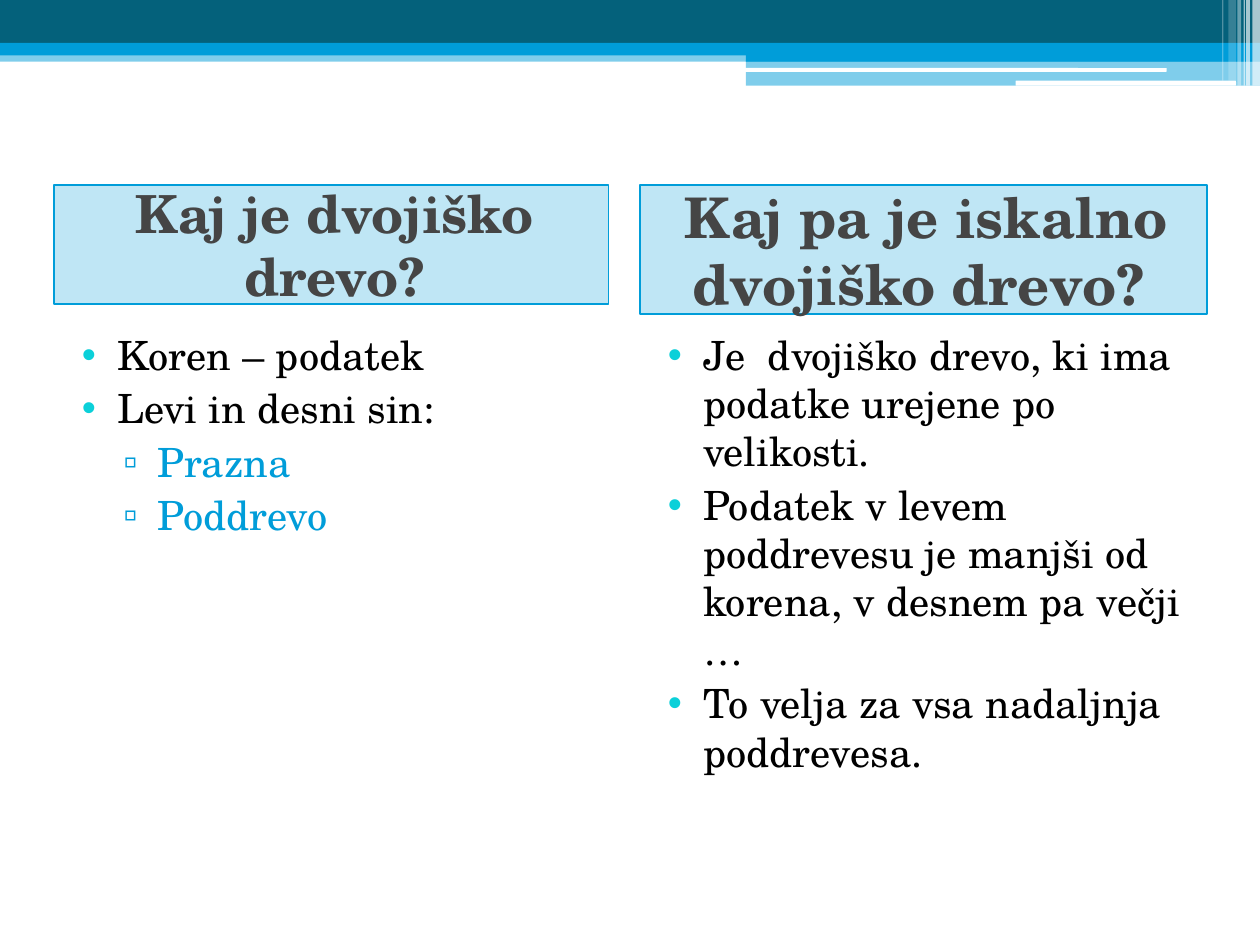
from lxml import etree
from pptx import Presentation
from pptx import util as u
from pptx.dml.color import RGBColor
from pptx.enum import shapes, text
from pptx.oxml.ns import qn

BLUE, TEAL, AQUA = "009DD9", "04617B", "0BD0D9"
WHITE, GREY, BLACK = "FFFFFF", "454545", "000000"


def paint(fill, color, opacity=100):
    fill.solid()
    fill.fore_color.rgb = RGBColor.from_string(color)
    if opacity < 100:
        tone = fill._xPr.find(qn("a:solidFill")).find(qn("a:srgbClr"))
        etree.SubElement(tone, qn("a:alpha"), val=str(opacity * 1000))


def write(para, words, size=23, color=BLACK, bold=False, level=0, margin=0.4,
          indent=-0.28, align=text.PP_ALIGN.LEFT, bullet=None, bullet_color=AQUA):
    para.level = level
    para.alignment = align
    para.space_before = u.Pt(3)
    span = para.add_run()
    span.text = words
    span.font.name = "TeX Gyre Schola"
    span.font.size = u.Pt(size)
    span.font.bold = bold
    paint(span.font.fill, color)
    props = para._p.get_or_add_pPr()
    props.set("marL", str(u.Inches(margin)))
    props.set("indent", str(u.Inches(indent)))
    if bullet:
        tint = etree.SubElement(props, qn("a:buClr"))
        etree.SubElement(tint, qn("a:srgbClr"), val=bullet_color)
        etree.SubElement(props, qn("a:buChar"), char=bullet)
    else:
        etree.SubElement(props, qn("a:buNone"))


deck = Presentation()
deck.slide_width = u.Inches(10)
deck.slide_height = u.Inches(7.5)
page = deck.slides.add_slide(deck.slide_layouts.get_by_name("Comparison"))
paint(page.background.fill, WHITE)
title = page.shapes.title._element
title.getparent().remove(title)

RECT = shapes.MSO_SHAPE.RECTANGLE
ROUND = shapes.MSO_SHAPE.ROUNDED_RECTANGLE
bands = [
    (RECT, 0, 0.4, 10, 0.09, BLUE, 50),
    (RECT, 0, 0, 10, 0.34, TEAL, 100),
    (RECT, 0, 0.34, 10, 0.1, BLUE, 100),
    (RECT, 5.92, 0.39, 4.08, 0.1, BLUE, 100),
    (RECT, 5.92, 0.48, 4.08, 0.2, BLUE, 50),
    (ROUND, 5.91, 0.54, 3.35, 0.03, WHITE, 100),
    (ROUND, 8.06, 0.64, 1.75, 0.04, WHITE, 100),
]
stripes = [
    (9.94, 0.06, 0.68, 65), (9.89, 0.03, 0.68, 65), (9.87, 0.01, 0.68, 60),
    (9.82, 0.03, 0.68, 40), (9.75, 0.06, 0.64, 20), (9.7, 0.01, 0.64, 30),
]
bands += [(RECT, left, 0, width, height, WHITE, opacity)
          for left, width, height, opacity in stripes]
for kind, left, top, width, height, color, opacity in bands:
    band = page.shapes.add_shape(kind, *map(u.Inches, (left, top, width, height)))
    band.shadow.inherit = False
    band.line.fill.background()
    paint(band.fill, color, opacity)

columns = [
    (0.43, 4.4, 0.94, 30, "Kaj je dvojiško drevo?",
     [(0, "Koren – podatek"), (0, "Levi in desni sin:"),
      (1, "Prazna"), (1, "Poddrevo")]),
    (5.08, 4.5, 1.02, 32, "Kaj pa je iskalno dvojiško drevo? ",
     [(0, "Je  dvojiško drevo, ki ima podatke urejene po velikosti."),
      (0, "Podatek v levem poddrevesu je manjši od korena, v desnem pa večji …"),
      (0, "To velja za vsa nadaljnja poddrevesa.")]),
]
level_formats = [
    dict(bullet="•"),
    dict(level=1, margin=0.72, indent=-0.27, color=BLUE, bullet="▫", bullet_color=BLUE),
]
holders = {holder.placeholder_format.idx: holder for holder in page.placeholders}
for number, (left, width, height, size, question, points) in enumerate(columns):
    heading, body = holders[2 * number + 1], holders[2 * number + 2]
    for box, top, tall, anchor in (
        (heading, 1.47, height, text.MSO_ANCHOR.MIDDLE),
        (body, 2.57, 4.64, text.MSO_ANCHOR.TOP),
    ):
        box.left, box.top = u.Inches(left), u.Inches(top)
        box.width, box.height = u.Inches(width), u.Inches(tall)
        box.text_frame.word_wrap = True
        box.text_frame.auto_size = text.MSO_AUTO_SIZE.NONE
        box.text_frame.vertical_anchor = anchor

    paint(heading.fill, BLUE, 25)
    paint(heading.line.fill, BLUE)
    heading.line.width = u.Pt(1)
    write(heading.text_frame.paragraphs[0], question, size=size, color=GREY,
          bold=True, margin=0.05, indent=0, align=text.PP_ALIGN.CENTER)

    for row, (level, words) in enumerate(points):
        frame = body.text_frame
        para = frame.add_paragraph() if row else frame.paragraphs[0]
        write(para, words, **level_formats[level])

deck.save("out.pptx")
